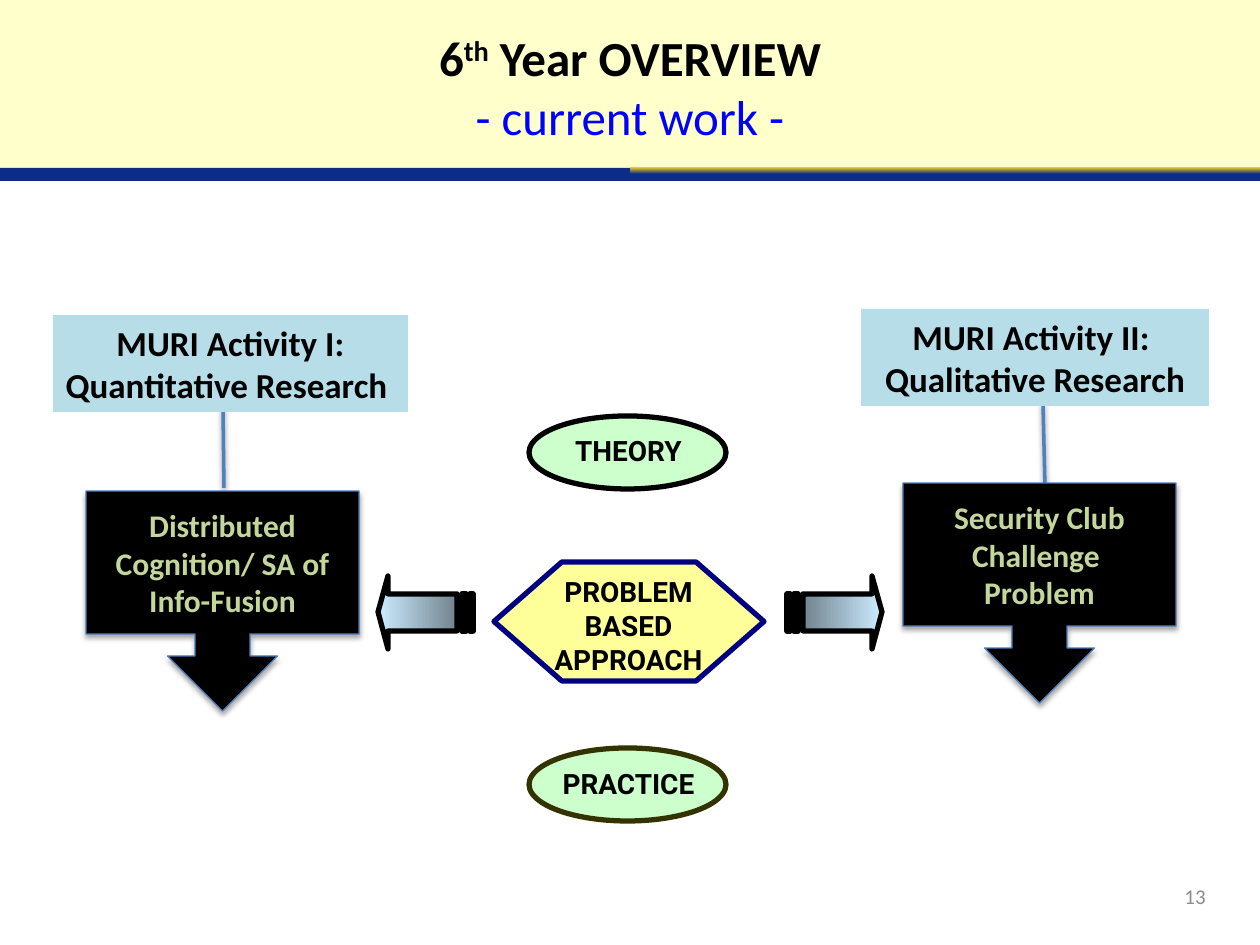
from lxml import etree
from pptx import Presentation
from pptx import util as u
from pptx.dml.color import RGBColor
from pptx.enum import shapes, text
from pptx.oxml.ns import qn

PX = 914400 / 126
COLORS = {
    "black": "000000", "cream": "FFFFCC", "blue": "0D2B88", "gold": "FED910",
    "title blue": "0000FF", "gray": "8C8C8C", "sky": "B7DEE8", "leaf": "C3D69B",
    "connector": "4F81BD", "edge": "4B7EBC", "yellow": "FFFF99", "navy": "000080",
    "mint": "CCFFCC", "olive": "333300", "steel": "5E6D76", "ice": "CCECFF",
}

# Boxes are left, top, width, height in px
ACTIVITIES = [
    {"label": ["MURI Activity I:", "Quantitative Research "],
     "label_box": (53, 315, 355, 97),
     "line": (223, 407, 224, 488),
     "topic": ["Distributed Cognition/ SA of Info-Fusion"],
     "topic_box": (86, 491, 273, 220)},
    {"label": ["MURI Activity II: ", "Qualitative Research"],
     "label_box": (861, 309, 348, 97),
     "line": (1043, 403, 1045, 485),
     "topic": ["Security Club", "Challenge ", "Problem"],
     "topic_box": (903, 483, 273, 220)},
]
S = shapes.MSO_SHAPE
CORE = [  # preset, box, fill, line, words, top of words, height of words, top inset
    (S.HEXAGON, (494, 562, 270, 119), "yellow", "navy",
     ["PROBLEM", "BASED", "APPROACH"], 575, 96, 0),
    (S.OVAL, (529, 416, 197, 73), "mint", "black", ["THEORY"], 428, 48, 6),
    (S.OVAL, (529, 748, 197, 73), "mint", "olive", ["PRACTICE"], 761, 48, 6),
]
ARROWS = [(378, 1), (882, -1)]  # tip x, direction from tip to tail
HEAD_Y = (576, 594, 612, 631, 649)  # barb, shaft, tip, shaft, barb
BARB, SHAFT = 10, 79  # distance from the tip
TAIL_BARS = [(84, 88), (92, 95)]


def px(*values):
    return [round(v * PX) for v in values]


def rgb(name):
    return RGBColor.from_string(COLORS[name])


def fill_gradient(shape, names, angle):
    shape.fill.gradient()
    shape.fill.gradient_angle = angle
    for stop, name in zip(shape.fill.gradient_stops, names):
        stop.color.rgb = rgb(name)


def outline(shape, color, width):
    shape.line.color.rgb = rgb(color)
    shape.line.width = u.Pt(width)


def add_shadow(shape, distance, alpha):
    """Put a soft downward shadow on a shape or connector whose line is set."""
    sppr = shape._element.spPr
    effects = sppr.find(qn("a:effectLst"))
    if effects is None:
        effects = etree.SubElement(sppr, qn("a:effectLst"))
    shadow = etree.SubElement(effects, qn("a:outerShdw"), blurRad=str(u.Pt(3.1)),
                              dist=str(u.Pt(distance)), dir="5400000", rotWithShape="0")
    color = etree.SubElement(shadow, qn("a:srgbClr"), val=COLORS["black"])
    etree.SubElement(color, qn("a:alpha"), val=str(alpha * 1000))


def add_box(preset, box, fill=None, line=None, width=3):
    sp = s.shapes.add_shape(preset, *px(*box))
    sp.shadow.inherit = False
    if fill:
        sp.fill.solid()
        sp.fill.fore_color.rgb = rgb(fill)
    if line:
        outline(sp, line, width)
    else:
        sp.line.fill.background()
    return sp


def write(shape, lines, font, size, color, bold=True, align=text.PP_ALIGN.CENTER,
          anchor=text.MSO_ANCHOR.TOP):
    tf = shape.text_frame
    tf.word_wrap = True
    tf.vertical_anchor = anchor
    tf.text = "\n".join(lines)
    for p in tf.paragraphs:
        p.alignment = align
        p.font.name, p.font.size, p.font.bold = font, u.Pt(size), bold
        p.font.color.rgb = rgb(color)
    return tf


def add_title():
    sp = s.shapes.title
    sp.left, sp.top, sp.width, sp.height = px(63, 21, 1134, 158)
    tf = write(sp, ["6"], "Calibri", 28, "black")
    tf.auto_size = text.MSO_AUTO_SIZE.NONE
    p = tf.paragraphs[0]
    r = p.add_run()
    r.text = "th"
    r.font._element.set("baseline", "30000")
    p.add_run().text = " Year OVERVIEW"
    p.add_line_break()
    r = p.add_run()
    r.text = "- current work -"
    r.font.bold = False
    r.font.color.rgb = rgb("title blue")


def add_block_arrow(tip, way):
    barb, shaft = tip + way * BARB, tip + way * SHAFT
    top, upper, middle, lower, bottom = HEAD_Y
    fb = s.shapes.build_freeform(barb, top, scale=PX)
    fb.add_line_segments([(barb, upper), (shaft, upper), (shaft, lower),
                          (barb, lower), (barb, bottom), (tip, middle)])
    for near, far in TAIL_BARS:
        x1, x2 = tip + way * near, tip + way * far
        fb.move_to(x2, upper)
        fb.add_line_segments([(x2, lower), (x1, lower), (x1, upper)])
    sp = fb.convert_to_shape()
    sp.shadow.inherit = False
    fill_gradient(sp, ("ice", "steel")[::way], 0)
    outline(sp, "black", 3)


def add_activity(activity):
    line = s.shapes.add_connector(shapes.MSO_CONNECTOR.STRAIGHT, *px(*activity["line"]))
    outline(line, "connector", 2)
    add_shadow(line, 1.6, 38)
    label = add_box(S.RECTANGLE, activity["label_box"], "sky")
    write(label, activity["label"], "Calibri", 20, "black")
    topic = add_box(S.DOWN_ARROW_CALLOUT, activity["topic_box"], "black", "edge", 0.75)
    add_shadow(topic, 1.8, 35)
    write(topic, activity["topic"], "Calibri", 18, "leaf", anchor=text.MSO_ANCHOR.MIDDLE)


def add_core(preset, box, fill, line, words, top, height, inset):
    sp = add_box(preset, box, fill, line)
    if preset == S.HEXAGON:
        sp.adjustments[0] = 0.57
    tb = s.shapes.add_textbox(*px(495, top, 267, height))
    tf = write(tb, words, "Roboto", 16, "black")
    tf.margin_top, tf.margin_bottom = px(inset, 0)


prs = Presentation()
prs.slide_width, prs.slide_height = px(1260, 945)
s = prs.slides.add_slide(prs.slide_layouts[5])

header = add_box(S.RECTANGLE, (0, 0, 1260, 170), "cream")
add_box(S.RECTANGLE, (0, 168, 1260, 13), "blue")
fill_gradient(add_box(S.RECTANGLE, (630, 167, 630, 7)), ("gold", "blue"), 270)
add_title()
s.shapes._spTree.append(s.shapes.title._element)

for activity in ACTIVITIES:
    add_activity(activity)
for item in CORE:
    add_core(*item)
for arrow in ARROWS:
    add_block_arrow(*arrow)

number = s.shapes.add_textbox(*px(924, 871, 294, 50))
write(number, ["13"], "Calibri", 12, "gray", False, text.PP_ALIGN.RIGHT,
      text.MSO_ANCHOR.MIDDLE)
prs.save("out.pptx")
